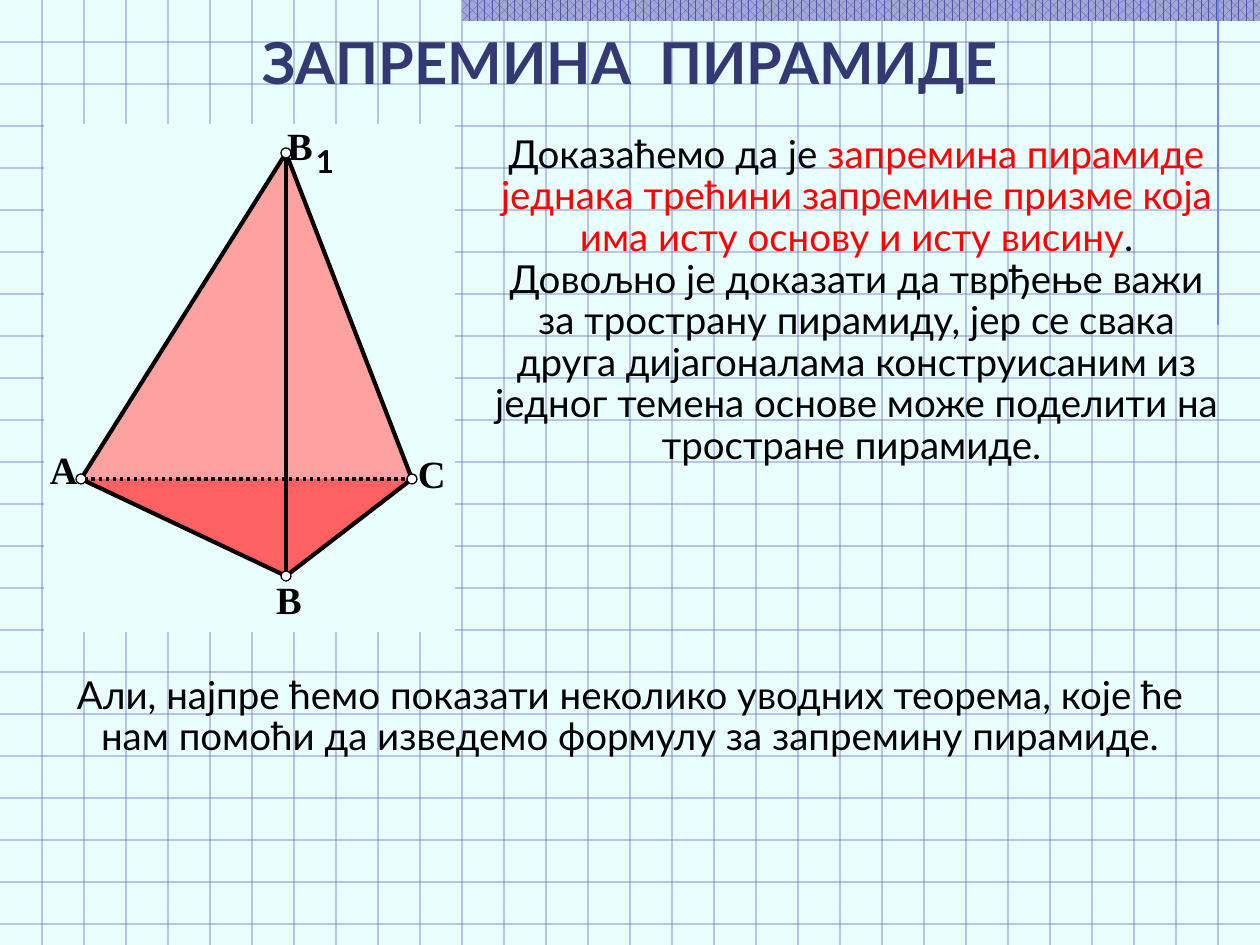
from pptx import Presentation
from pptx.dml.color import RGBColor as Rgb
from pptx.enum.dml import MSO_LINE as Dash, MSO_PATTERN as Pat
from pptx.enum.shapes import MSO_CONNECTOR as Conn, MSO_SHAPE as Geo
from pptx.enum.text import MSO_ANCHOR as Anchor, PP_ALIGN as Align
from pptx.oxml.ns import qn
from pptx.util import Emu, Pt
from lxml.etree import SubElement as Sub

# Content
SANS, SERIF = "Lato", "Times New Roman"
PAPER, BLUE, INK, RED = "E9FFFE", "4F56AD", "010101", "FF0000"
TITLE = "ЗАПРЕМИНА  ПИРАМИДЕ"
CLAIM = [
    ("Доказаћемо да је ", "000000"),
    ("запремина пирамиде једнака трећини запремине призме која има исту "
     "основу и исту висину", RED),
    (". Довољно је доказати да тврђење важи за тространу пирамиду, јер се "
     "свака друга дијагоналама конструисаним из једног темена основе може "
     "поделити на тростране пирамиде. ", "000000"),
]
NEXT = ("Али, најпре ћемо показати неколико уводних теорема, које ће нам "
        "помоћи да изведемо формулу за запремину пирамиде.")

# Pyramid: vertices, faces, edges, labels (text, box, size, font)
DOTS = {"T": (286, 153), "C": (412, 479), "B": (286, 576), "A": (81, 479)}
FACES = [("TCB", "FDA1A1"), ("BTA", "FDA1A1"), ("CBA", "FD6161")]
EDGES = ["TC", "BC", "AB", "AT", "TB"]
LABELS = [
    ("B", (287, 122, 45, 58), 22, SERIF),
    ("1", (316, 142, 32, 45), 18, SANS),
    ("C", (418, 450, 48, 58), 22, SERIF),
    ("B", (276, 576, 45, 58), 22, SERIF),
    ("A", (50, 446, 48, 58), 22, SERIF),
]

# Lengths in px
WIDE, HIGH, STEP, DOT = 1260, 945, 42, 10
SCALE = 914400 / 126


def px(n):
    return Emu(round(n * SCALE))


def tint(code):
    return Rgb.from_string(code)


def paint(shape, fill, line=None):
    shape.shadow.inherit = False
    shape.fill.solid()
    shape.fill.fore_color.rgb = tint(fill)
    if line:
        shape.line.color.rgb = tint(line)
        shape.line.width = Pt(0)
    else:
        shape.line.fill.background()
    return shape


def block(geo, box, fill, line=None):
    return paint(shapes.add_shape(geo, *map(px, box)), fill, line)


def rule(start, end, color, width=0.75, dash=None, alpha=None):
    link = shapes.add_connector(Conn.STRAIGHT, *map(px, start + end))
    link.line.color.rgb = tint(color)
    link.line.width = Pt(width)
    if dash:
        link.line.dash_style = dash
    props = link._element.spPr
    if alpha:
        hue = next(props.iter(qn("a:srgbClr")))
        Sub(hue, qn("a:alpha")).set("val", str(alpha * 1000))
    Sub(props, qn("a:effectLst"))


def write(text, box, size=22, font=SANS, color="000000", bold=False,
          align=Align.CENTER, space=None, inset=None, wrap=True):
    frame = shapes.add_textbox(*map(px, box)).text_frame
    frame.word_wrap = wrap
    frame.vertical_anchor = Anchor.TOP
    if inset is not None:
        frame.margin_left = frame.margin_right = px(inset)
        frame.margin_top = frame.margin_bottom = px(inset)
    para = frame.paragraphs[0]
    para.alignment = align
    if space:
        para.line_spacing = space
    for part, hue in [(text, color)] if isinstance(text, str) else text:
        run = para.add_run()
        run.text = part
        run.font.name, run.font.size, run.font.bold = font, Pt(size), bold
        run.font.color.rgb = tint(hue)


deck = Presentation()
deck.slide_width, deck.slide_height = px(WIDE), px(HIGH)
slide = deck.slides.add_slide(deck.slide_layouts[6])
shapes = slide.shapes
slide.background.fill.solid()
slide.background.fill.fore_color.rgb = tint(PAPER)

# Squared paper
for y in range(STEP, HIGH, STEP):
    rule((0, y), (WIDE, y), BLUE, alpha=50)
for x in range(STEP, WIDE, STEP):
    rule((x, 0), (x, HIGH), BLUE, alpha=50)

# Top band and margin line
band = block(Geo.RECTANGLE, (462, 0, 798, 21), BLUE)
band.fill.patterned()
band.fill.pattern = Pat.PERCENT_60
band.fill.fore_color.rgb = tint(BLUE)
band.fill.back_color.rgb = tint("A3A7D5")
rule((1218, 0), (1218, 325), "6F89F7")

# Texts
write(TITLE, (53, 21, 1155, 82), size=33, color="353973", bold=True)
write(CLAIM, (481, 129, 751, 515), space=0.9)
write(NEXT, (50, 670, 1160, 100), space=0.9)

# Pyramid
block(Geo.RECTANGLE, (44, 124, 411, 508), PAPER)
for names, fill in FACES:
    first, *rest = [DOTS[n] for n in names]
    face = shapes.build_freeform(*first, scale=SCALE)
    face.add_line_segments(rest, close=True)
    paint(face.convert_to_shape(), fill)
rule(DOTS["C"], DOTS["A"], INK, width=0, dash=Dash.ROUND_DOT)
for a, b in EDGES:
    rule(DOTS[a], DOTS[b], INK, width=2.38)
for x, y in DOTS.values():
    block(Geo.OVAL, (x - DOT / 2, y - DOT / 2, DOT, DOT), "FFFFFF", INK)
for text, box, size, font in LABELS:
    write(text, box, size=size, font=font, bold=True, align=Align.LEFT,
          inset=0, wrap=False)

deck.save("out.pptx")
